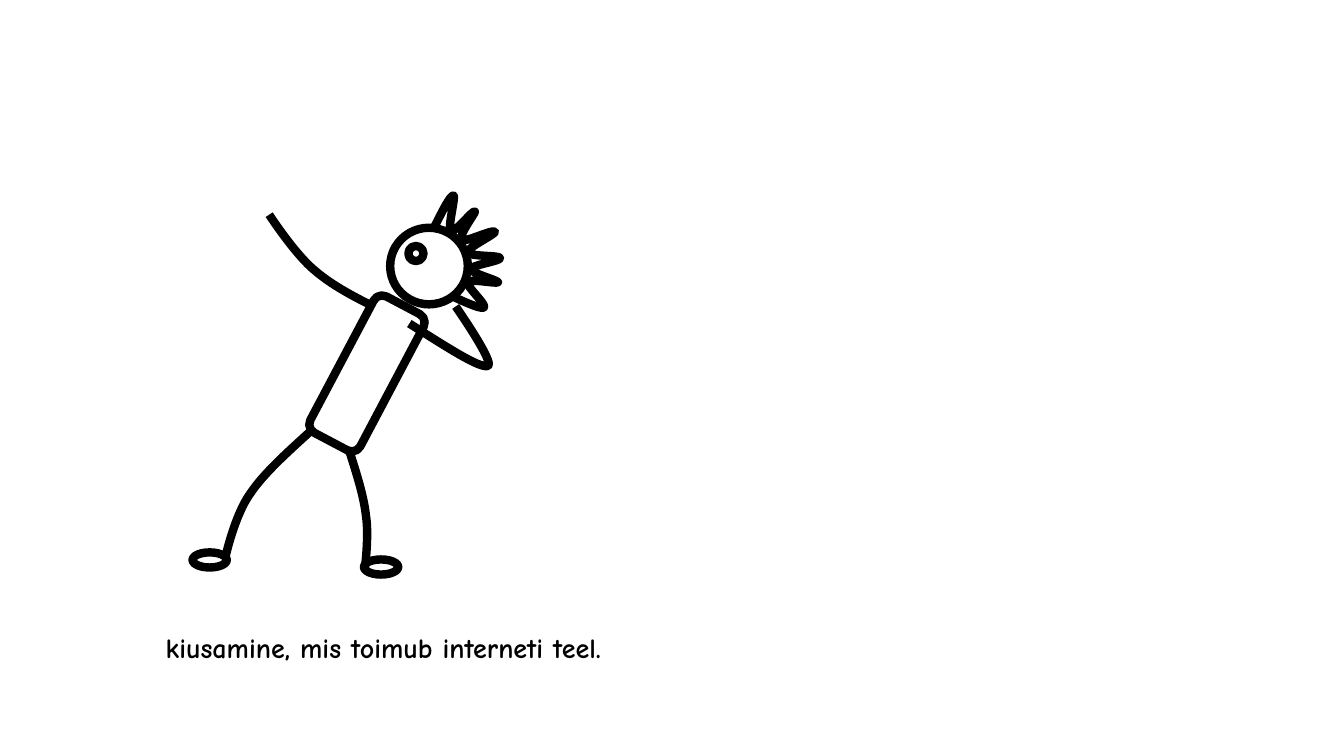
import pptx
import pptx.dml.color
import pptx.enum.shapes
import pptx.enum.text
import pptx.oxml
import pptx.util

SLIDE_W, SLIDE_H = pptx.util.Inches(13.33), pptx.util.Inches(7.5)
BLACK, WHITE = "000000", "FFFFFF"
FIGURE_COLUMNS = 310  # grid columns across the stick figure; rows are as high as columns are wide
MSO = pptx.enum.shapes.MSO_SHAPE

# Curves: start point, then two control points and an end point per bend
RAISED_ARM = [(197, 122), (170, 109), (143, 96), (123, 79), (103, 63), (77, 23), (77, 23)]
BENT_ARM = [(216, 131), (251, 153), (286, 176), (294, 173), (301, 170), (262, 114), (262, 114)]
LEFT_LEG = [(120, 236), (96, 258), (72, 279), (58, 300), (43, 321), (34, 361), (34, 361)]
RIGHT_LEG = [(157, 259), (164, 281), (171, 303), (173, 322), (176, 341), (172, 373), (172, 373)]
HAIR = [
    (241, 35), (249, 19), (257, 3), (260, 4), (262, 5), (254, 36), (257, 39),
    (261, 42), (279, 18), (281, 20), (282, 21), (264, 44), (268, 48),
    (271, 51), (299, 37), (301, 40), (302, 42), (273, 56), (274, 60),
    (275, 65), (306, 63), (306, 66), (307, 69), (277, 73), (277, 77),
    (277, 81), (304, 88), (304, 90), (303, 92), (277, 86), (274, 90),
    (272, 94), (293, 112), (290, 115), (288, 118), (261, 105), (261, 105),
]

# Solid parts: preset, (column, row, columns, rows), rotation, fill
TORSO = (MSO.ROUNDED_RECTANGLE, (146, 104, 56, 153), 27.9, WHITE)
HEAD = (MSO.OVAL, (197, 36, 77, 76), 0, WHITE)
LEFT_FOOT = (MSO.OVAL, (1, 358, 34, 15), 0, None)
RIGHT_FOOT = (MSO.OVAL, (171, 365, 34, 15), 0, None)
EYE = (MSO.OVAL, (215, 54, 15, 15), 0, None)

# Back to front
FIGURE_PARTS = [RAISED_ARM, TORSO, HEAD, LEFT_LEG, HAIR, LEFT_FOOT,
                RIGHT_LEG, RIGHT_FOOT, EYE, BENT_ARM]


def color(hex_string):
    return pptx.dml.color.RGBColor.from_string(hex_string)


def outline(shape, fill=None):
    shape.shadow.inherit = False
    shape.line.color.rgb = color(BLACK)
    shape.line.width = pptx.util.Pt(6)
    if fill:
        shape.fill.solid()
        shape.fill.fore_color.rgb = color(fill)
    else:
        shape.fill.background()


def bend_segments(shape):
    """Turn each run of three straight segments into one Bezier curve."""
    lines = shape.element.xpath(".//a:path/a:lnTo")
    for first in range(0, len(lines), 3):
        bend = pptx.oxml.parse_xml(
            '<a:cubicBezTo xmlns:a="http://schemas.openxmlformats.org/drawingml/2006/main"/>')
        lines[first].addprevious(bend)
        for line in lines[first:first + 3]:
            bend.append(line[0])
            line.getparent().remove(line)


def add_stick_figure(slide, left, top, width):
    unit = width / FIGURE_COLUMNS
    figure = slide.shapes.add_group_shape()
    for part in FIGURE_PARTS:
        if isinstance(part, list):
            builder = figure.shapes.build_freeform(*part[0], scale=unit)
            builder.add_line_segments(part[1:], close=False)
            limb = builder.convert_to_shape(int(left), int(top))
            bend_segments(limb)
            outline(limb)
        else:
            preset, (column, row, columns, rows), rotation, fill = part
            solid = figure.shapes.add_shape(
                preset, int(left + column * unit), int(top + row * unit),
                int(columns * unit), int(rows * unit))
            solid.rotation = rotation
            outline(solid, fill)


def add_caption(slide, left, top, width, height):
    caption = slide.shapes.add_textbox(int(left), int(top), int(width), int(height))
    frame = caption.text_frame
    frame_format = {
        "word_wrap": True,
        "vertical_anchor": pptx.enum.text.MSO_ANCHOR.TOP,
        "margin_left": int(width * 0.02),
        "margin_right": int(width * 0.13),
        "margin_top": int(height * 0.11),
    }
    for name, value in frame_format.items():
        setattr(frame, name, value)
    definition = frame.paragraphs[0]
    definition.alignment = pptx.enum.text.PP_ALIGN.CENTER
    words = definition.add_run()
    words.text = "kiusamine, mis toimub interneti teel."
    for name, value in {"name": "Comic Neue", "size": pptx.util.Pt(20), "bold": True}.items():
        setattr(words.font, name, value)
    words.font.color.rgb = color(BLACK)


def main():
    deck = pptx.Presentation()
    deck.slide_width, deck.slide_height = SLIDE_W, SLIDE_H
    slide = deck.slides.add_slide(deck.slide_layouts.get_by_name("Blank"))
    slide.background.fill.solid()
    slide.background.fill.fore_color.rgb = color(WHITE)
    add_stick_figure(slide, pptx.util.Inches(1.9), pptx.util.Inches(1.9), pptx.util.Inches(3.1))
    add_caption(slide, pptx.util.Inches(0.92), pptx.util.Inches(6.12),
                pptx.util.Inches(6.48), pptx.util.Inches(1.25))
    deck.save("out.pptx")


if __name__ == "__main__":
    main()
